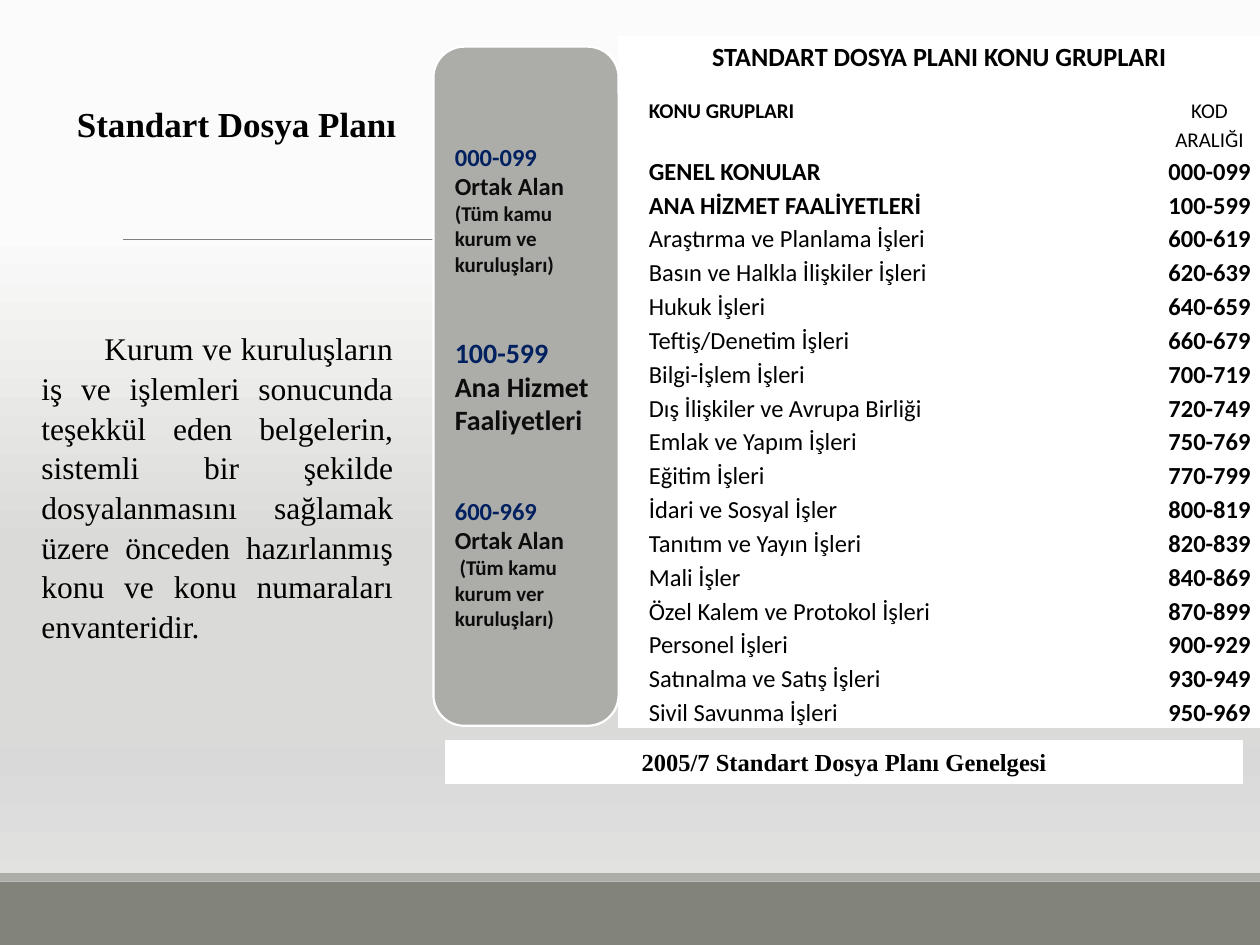
from copy import deepcopy
from pptx import Presentation
from pptx.dml.color import RGBColor
from pptx.enum.shapes import MSO_CONNECTOR, MSO_SHAPE
from pptx.enum.text import MSO_ANCHOR, PP_ALIGN
from pptx.oxml.ns import qn
from pptx.util import Inches, Pt
from lxml.etree import SubElement

WIDE, HIGH = Inches(10), Inches(7.5)
COL, ROW = WIDE / 100, HIGH / 75
SERIF, SANS = "Times New Roman", "Calibri"
WHITE, BLACK, NAVY, INK = "FFFFFF", "000000", "002060", "0D0D0D"
GREY, DARK, RULE = "ACADA8", "82847C", "808080"
STOPS = [(0.24, "FBFBFB"), (0.58, "DADAD8"), (0.79, "D9D9D9"), (1, "E6E6E5")]

GROUPS = [
    ("GENEL KONULAR", "000-099"),
    ("ANA HİZMET FAALİYETLERİ", "100-599"),
    ("Araştırma ve Planlama İşleri", "600-619"),
    ("Basın ve Halkla İlişkiler İşleri", "620-639"),
    ("Hukuk İşleri", "640-659"),
    ("Teftiş/Denetim İşleri", "660-679"),
    ("Bilgi-İşlem İşleri", "700-719"),
    ("Dış İlişkiler ve Avrupa Birliği", "720-749"),
    ("Emlak ve Yapım İşleri", "750-769"),
    ("Eğitim İşleri", "770-799"),
    ("İdari ve Sosyal İşler", "800-819"),
    ("Tanıtım ve Yayın İşleri", "820-839"),
    ("Mali İşler", "840-869"),
    ("Özel Kalem ve Protokol İşleri", "870-899"),
    ("Personel İşleri", "900-929"),
    ("Satınalma ve Satış İşleri", "930-949"),
    ("Sivil Savunma İşleri", "950-969"),
]
AREAS = [
    ("000-099", "Ortak Alan", "(Tüm kamu kurum ve kuruluşları)", 14),
    ("100-599", "Ana Hizmet Faaliyetleri", "", 16),
    ("600-969", "Ortak Alan", " (Tüm kamu kurum ver kuruluşları)", 14),
]
ABOUT = ("Kurum ve kuruluşların iş ve işlemleri sonucunda teşekkül eden belgelerin, "
         "sistemli bir şekilde dosyalanmasını sağlamak üzere önceden hazırlanmış "
         "konu ve konu numaraları envanteridir.")


def tint(code):
    return RGBColor.from_string(code)


def place(box):
    x, y, w, h = box
    return int(x * COL), int(y * ROW), int(w * COL), int(h * ROW)


def write(para, text, size, face, color=BLACK, bold=True):
    run = para.add_run()
    run.text = text
    run.font.size, run.font.name = Pt(size), face
    run.font.bold = bold
    run.font.color.rgb = tint(color)


def shape(slide, box, fill, line=None, width=1.25, kind=MSO_SHAPE.RECTANGLE):
    form = slide.shapes.add_shape(kind, *place(box))
    form.shadow.inherit = False
    form.fill.solid()
    form.fill.fore_color.rgb = tint(fill)
    if line:
        form.line.color.rgb = tint(line)
        form.line.width = Pt(width)
    else:
        form.line.fill.background()
    return form


def backdrop(slide):
    fill = slide.background.fill
    fill.gradient()
    fill.gradient_angle = 270
    stops = slide.element.find(".//" + qn("a:gsLst"))
    while len(stops) < len(STOPS):
        stops.append(deepcopy(stops[0]))
    for stop, (spot, code) in zip(fill.gradient_stops, STOPS):
        stop.position = spot
        stop.color.rgb = tint(code)


def footer(slide, box):
    x, y, w, h = box
    edge = h * 0.12
    shape(slide, (x, y + edge, w, h - edge), DARK)
    shape(slide, (x, y, w, edge), GREY)


def divider(slide, box):
    x, y, w, h = place(box)
    line = slide.shapes.add_connector(MSO_CONNECTOR.STRAIGHT, x, y, x + w, y + h)
    line.line.color.rgb = tint(RULE)
    line.line.width = Pt(0.5)
    SubElement(line.element.spPr, qn("a:effectLst"))


def heading(slide, box):
    title = slide.shapes.title
    title.left, title.top, title.width, title.height = place(box)
    frame = title.text_frame
    frame.word_wrap = True
    frame.vertical_anchor = MSO_ANCHOR.TOP
    para = frame.paragraphs[0]
    para.alignment = PP_ALIGN.LEFT
    write(para, "Standart Dosya Planı", 20, SERIF)


def about(slide, box):
    frame = slide.shapes.add_textbox(*place(box)).text_frame
    frame.word_wrap = True
    para = frame.paragraphs[0]
    para.alignment = PP_ALIGN.JUSTIFY
    para.line_spacing = 1.05
    para._p.get_or_add_pPr().set("indent", str(Inches(0.5)))
    write(para, ABOUT, 18, SERIF, bold=False)


def fill_cell(cell, text="", size=14, bold=True, align=PP_ALIGN.LEFT):
    cell.fill.solid()
    cell.fill.fore_color.rgb = tint(WHITE)
    cell.margin_left = cell.margin_right = Inches(0.06)
    cell.margin_top = cell.margin_bottom = 0
    para = cell.text_frame.paragraphs[0]
    para.alignment = align
    if text:
        para.line_spacing = 1.15
        write(para, text, size, SANS, bold=bold)
    else:
        SubElement(para._p, qn("a:endParaRPr")).set("sz", "1200")


def plan(slide, box):
    x, y, w, h = box
    heights = [4.6, 3.5] + [2.68] * len(GROUPS)
    widths = [1.8, w - 9.8, 8]
    grid = slide.shapes.add_table(len(heights), len(widths), *place(box)).table
    for row, size in zip(grid.rows, heights):
        row.height = int(size * ROW)
    for col, size in zip(grid.columns, widths):
        col.width = int(size * COL)
    grid.cell(0, 0).merge(grid.cell(0, 2))
    mid = PP_ALIGN.CENTER
    fill_cell(grid.cell(0, 0), "STANDART DOSYA PLANI KONU GRUPLARI", 15, align=mid)
    fill_cell(grid.cell(1, 0))
    fill_cell(grid.cell(1, 1), "KONU GRUPLARI", 12)
    fill_cell(grid.cell(1, 2), "KOD ARALIĞI", 12, False, mid)
    for at, (name, code) in enumerate(GROUPS, 2):
        fill_cell(grid.cell(at, 0))
        fill_cell(grid.cell(at, 1), name, bold=name.isupper())
        fill_cell(grid.cell(at, 2), code, align=mid)


def areas(slide, box):
    form = shape(slide, box, GREY, WHITE, kind=MSO_SHAPE.ROUNDED_RECTANGLE)
    frame = form.text_frame
    frame.word_wrap = True
    frame.vertical_anchor = MSO_ANCHOR.MIDDLE
    para = frame.paragraphs[0]
    for at, (code, name, note, size) in enumerate(AREAS):
        if at:
            para = frame.add_paragraph()
            para.space_before = Pt(34)
        para.alignment = PP_ALIGN.LEFT
        write(para, code, size, SANS, NAVY)
        for text, points in ((name, size), (note, 12)):
            if text:
                para = frame.add_paragraph()
                para.alignment = PP_ALIGN.LEFT
                write(para, text, points, SANS, INK)


def notice(slide, box):
    frame = shape(slide, box, WHITE, WHITE, 0.75).text_frame
    frame.word_wrap = True
    frame.vertical_anchor = MSO_ANCHOR.TOP
    para = frame.paragraphs[0]
    para.alignment = PP_ALIGN.CENTER
    write(para, "2005/7 Standart Dosya Planı Genelgesi", 14, SERIF)


def main():
    deck = Presentation()
    deck.slide_width, deck.slide_height = WIDE, HIGH
    slide = deck.slides.add_slide(deck.slide_layouts[5])
    backdrop(slide)
    footer(slide, (0, 69.3, 100, 5.7))
    divider(slide, (9.8, 19, 81.7, 0))
    heading(slide, (5.1, 7.6, 56.7, 11.1))
    about(slide, (2.3, 25.5, 29.9, 25.2))
    plan(slide, (49.1, 2.9, 50.9, 54.5))
    areas(slide, (34.4, 3.7, 14.7, 53.9))
    shape(slide, (49.1, 7.6, 2.2, 3.4), WHITE, WHITE)
    notice(slide, (35.4, 58.8, 63.2, 3.4))
    deck.save("out.pptx")


if __name__ == "__main__":
    main()
